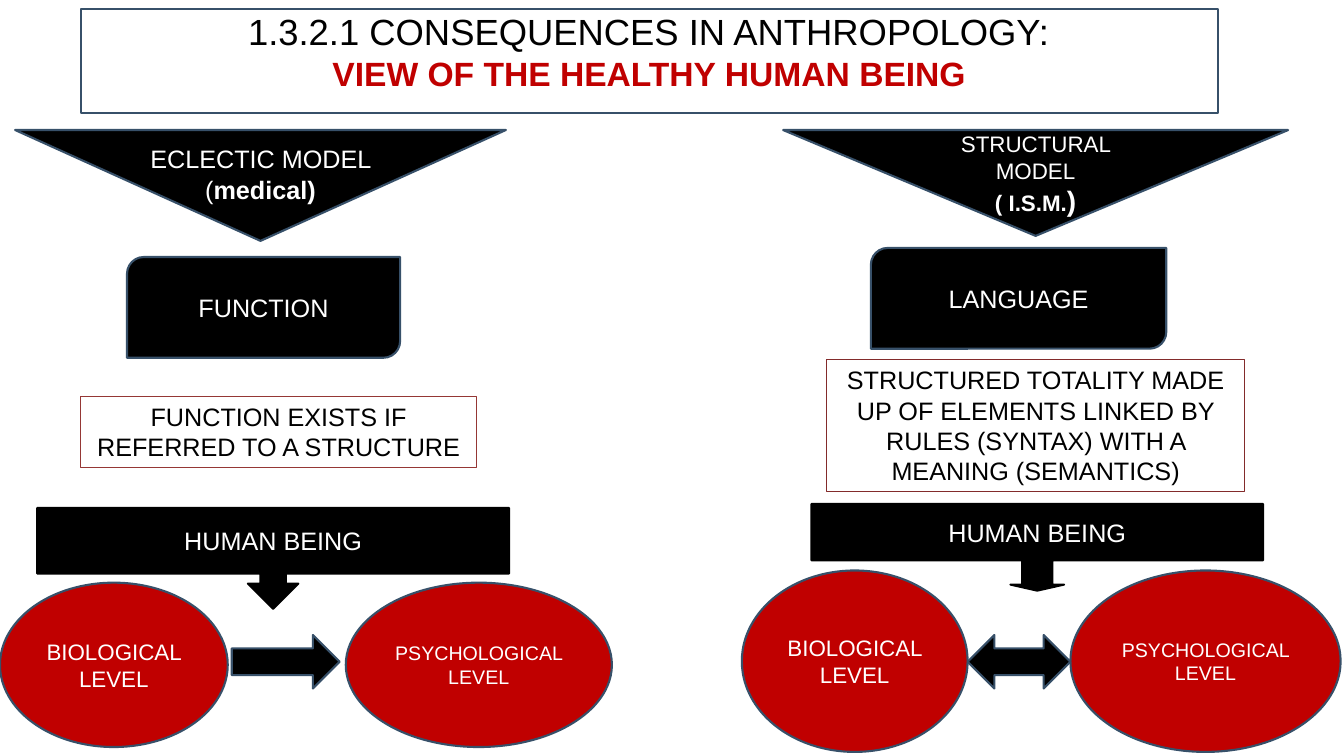
"""Build a slide comparing two models of the healthy human being."""
from pptx import Presentation
from pptx import util as u
from pptx.dml.color import RGBColor
from pptx.enum import shapes, text

BLACK = RGBColor(0x00, 0x00, 0x00)
WHITE = RGBColor(0xFF, 0xFF, 0xFF)
RED = RGBColor(0xC0, 0x00, 0x00)
SLATE = RGBColor(0x37, 0x50, 0x69)
BRICK = RGBColor(0x95, 0x37, 0x35)
MAROON = RGBColor(0x83, 0x2B, 0x2B)
FONT = "Arial"
KIND = shapes.MSO_SHAPE

TITLE_BOX = (57.6, 6.5, 812.2, 74.2)
TITLE = [
    [("1.3.2.1 CONSEQUENCES IN ANTHROPOLOGY:", 26, False, BLACK)],
    [("VIEW OF THE HEALTHY HUMAN BEING", 24, True, RED)],
]
MODELS = [
    {
        "heading": ((10.8, 92.9, 350.6, 79.2), 9.7,
                    [[("ECLECTIC MODEL (", 18, False, WHITE), ("medical)", 18, True, WHITE)]]),
        "concept": ((90.7, 183.6, 195.1, 72), "FUNCTION"),
        "definition": ((57.6, 283, 283, 51.1), BRICK,
                       "FUNCTION EXISTS IF REFERRED TO A STRUCTURE"),
        "human": ((26.6, 362.9, 337, 72), (0.25, 0.25, 0.25, 0.65)),
        "biological": (0, 416.2, 162.7, 117.4),
        "psychological": (247, 416.2, 190.1, 117.4),
        "link": (KIND.RIGHT_ARROW, (165.6, 453.6, 77, 38.2)),
    },
    {
        "heading": ((559.4, 92.9, 360.7, 75.6), 0,
                    [[("STRUCTURAL MODEL", 16, False, WHITE)],
                     [("( I.S.M.", 16, True, WHITE), (")", 20, True, WHITE)]]),
        "concept": ((622.1, 177.1, 211, 72), "LANGUAGE"),
        "definition": ((590.4, 257, 298.8, 94.3), MAROON,
                       "STRUCTURED TOTALITY MADE UP OF ELEMENTS LINKED BY "
                       "RULES (SYNTAX) WITH A MEANING (SEMANTICS)"),
        "human": ((579.6, 360, 322.6, 61.9), (0.35, 0.31, 0.07, 0.65)),
        "biological": (529.9, 407.5, 161.3, 129.6),
        "psychological": (764.6, 407.5, 193, 129.6),
        "link": (KIND.LEFT_RIGHT_ARROW, (691.2, 453.6, 73.4, 38.2)),
    },
]


def add_part(slide, kind, box, fill, line, paragraphs=(), line_width=1.5, top=None, side=7.2):
    """Add a filled shape; a given top inset anchors its text to the top."""
    part = slide.shapes.add_shape(kind, *(u.Pt(length) for length in box))
    part.shadow.inherit = False
    part.fill.solid()
    part.fill.fore_color.rgb = fill
    part.line.color.rgb = line
    part.line.width = u.Pt(line_width)
    frame = part.text_frame
    frame.word_wrap = True
    frame.margin_left = frame.margin_right = u.Pt(side)
    frame.vertical_anchor = text.MSO_ANCHOR.MIDDLE
    if top is not None:
        frame.vertical_anchor = text.MSO_ANCHOR.TOP
        frame.margin_top, frame.margin_bottom = u.Pt(top), 0
    for index, runs in enumerate(paragraphs):
        paragraph = frame.add_paragraph() if index else frame.paragraphs[0]
        paragraph.alignment = text.PP_ALIGN.CENTER
        for words, size, bold, color in runs:
            run = paragraph.add_run()
            run.text = words
            run.font.name = FONT
            run.font.size = u.Pt(size)
            run.font.bold = bold
            run.font.color.rgb = color
    return part


def label(words, size=18, color=WHITE):
    """Return a single plain paragraph."""
    return [[(words, size, False, color)]]


def add_model(slide, model):
    """Add one column of the comparison."""
    box, top, heading = model["heading"]
    add_part(slide, KIND.FLOWCHART_MERGE, box, BLACK, SLATE, heading, top=top)
    box, concept = model["concept"]
    add_part(slide, KIND.ROUND_2_DIAG_RECTANGLE, box, BLACK, SLATE, label(concept))
    box, border, definition = model["definition"]
    add_part(slide, KIND.RECTANGLE, box, WHITE, border, label(definition, color=BLACK),
             line_width=0.75, top=3.6)
    box, proportions = model["human"]
    human = add_part(slide, KIND.DOWN_ARROW_CALLOUT, box, BLACK, BLACK, label("HUMAN BEING"))
    for index, proportion in enumerate(proportions):
        human.adjustments[index] = proportion
    for level, size in (("biological", 16), ("psychological", 14)):
        add_part(slide, KIND.OVAL, model[level], RED, SLATE,
                 label(f"{level.upper()} LEVEL", size), side=3.6)
    arrow, box = model["link"]
    add_part(slide, arrow, box, BLACK, SLATE)


def main():
    """Create and save the slide."""
    deck = Presentation()
    deck.slide_width, deck.slide_height = u.Pt(960), u.Pt(540)
    slide = deck.slides.add_slide(deck.slide_layouts[6])
    add_part(slide, KIND.RECTANGLE, TITLE_BOX, WHITE, SLATE, TITLE, top=0)
    for model in MODELS:
        add_model(slide, model)
    deck.save("out.pptx")


if __name__ == "__main__":
    main()
